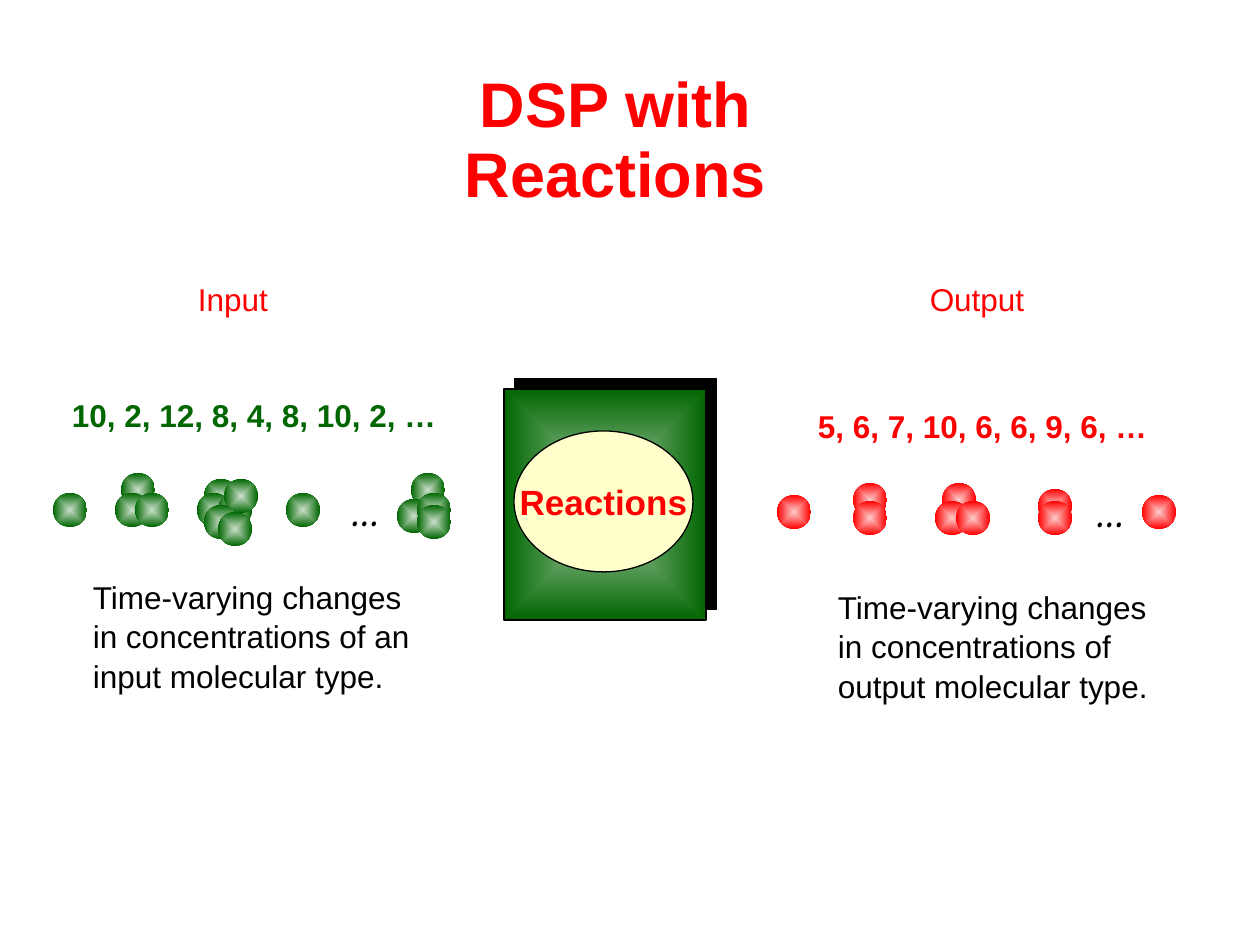
"""Build the "DSP with Reactions" slide: input signal, reaction box, output signal."""
from lxml import etree
from pptx import Presentation
from pptx import util as u
from pptx.dml.color import RGBColor
from pptx.enum import shapes, text
from pptx.oxml import parse_xml
from pptx.oxml.ns import qn, nsdecls

COLORS = {
    "red": "FF0000", "light red": "FECBCB",
    "green": "006600", "light green": "CBDFCB", "box green": "A9CBA9",
    "cream": "FFFFCC", "black": "000000",
}
SCALE = u.Inches(1) / 126
MOLECULE = 34


def fill_radial(shape, center, edge):
    shape.shadow.inherit = False
    shape.fill.gradient()
    for stop, color in zip(shape.fill.gradient_stops, (center, edge)):
        stop.color.rgb = RGBColor.from_string(COLORS[color])
    linear = shape._element.spPr.find(".//" + qn("a:lin"))
    linear.getparent().replace(linear, parse_xml(
        f'<a:path {nsdecls("a")} path="shape">'
        '<a:fillToRect l="50000" t="50000" r="50000" b="50000"/></a:path>'))


def write(shape, words, size, color, bold=False, italic=False, font="Arial",
          wrap=True, align=text.PP_ALIGN.LEFT, anchor=text.MSO_ANCHOR.MIDDLE):
    frame = shape.text_frame
    frame.text = words
    frame.auto_size = text.MSO_AUTO_SIZE.NONE
    frame.word_wrap = wrap
    frame.vertical_anchor = anchor
    frame.margin_left = frame.margin_right = u.Inches(0.07)
    frame.margin_top = frame.margin_bottom = u.Inches(0.04)
    paragraph = frame.paragraphs[0]
    paragraph.alignment = align
    paragraph.font.name = font
    paragraph.font.size = u.Pt(size)
    paragraph.font.bold = bold
    paragraph.font.italic = italic
    paragraph.font.color.rgb = RGBColor.from_string(COLORS[color])
    return paragraph


deck = Presentation()
deck.slide_width, deck.slide_height = u.Inches(10), u.Inches(7.5)
slide = deck.slides.add_slide(deck.slide_layouts[5])

signals = [
    ("green", (341, 493, 48, 33),
     [(53, 493), (121, 473), (115, 493), (135, 493), (204, 479), (197, 493),
      (218, 493), (224, 479), (204, 505), (218, 512), (286, 493), (411, 473),
      (397, 499), (417, 493), (417, 505)]),
    ("red", (1086, 495, 48, 32),
     [(777, 495), (853, 483), (853, 501), (942, 483), (935, 501), (956, 501),
      (1038, 489), (1038, 501), (1142, 495)]),
]
for color, dots_place, molecules in signals:
    signal = slide.shapes.add_group_shape()
    for left, top in molecules:
        molecule = signal.shapes.add_shape(
            shapes.MSO_SHAPE.OVAL,
            *(round(n * SCALE) for n in (left, top, MOLECULE, MOLECULE)))
        fill_radial(molecule, f"light {color}", color)
        molecule.line.fill.background()
    dots = signal.shapes.add_textbox(*(round(n * SCALE) for n in dots_place))
    write(dots, "…", 24, "black", italic=True, font="Cambria")

title = slide.shapes.title
title.left, title.top, title.width, title.height = (
    round(n * SCALE) for n in (370, 62, 491, 79))
heading = write(title, "DSP with Reactions", 36, "red", bold=True, wrap=False,
                align=text.PP_ALIGN.CENTER, anchor=text.MSO_ANCHOR.TOP)
heading.line_spacing = 0.93
title.text_frame.margin_top = u.Inches(0.07)

system = slide.shapes.add_shape(
    shapes.MSO_SHAPE.RECTANGLE, *(round(n * SCALE) for n in (504, 389, 202, 231)))
fill_radial(system, "box green", "green")
effects = system._element.spPr.find(qn("a:effectLst"))
shadow = etree.SubElement(effects, qn("a:outerShdw"), dist=str(u.Pt(8.5)),
                          dir=str(315 * 60000), algn="ctr", rotWithShape="0")
etree.SubElement(shadow, qn("a:srgbClr"), val=COLORS["black"])

reactions = slide.shapes.add_shape(
    shapes.MSO_SHAPE.OVAL, *(round(n * SCALE) for n in (514, 431, 179, 141)))
reactions.shadow.inherit = False
reactions.fill.solid()
reactions.fill.fore_color.rgb = RGBColor.from_string(COLORS["cream"])
write(reactions, "Reactions", 20, "red", bold=True, wrap=False,
      align=text.PP_ALIGN.CENTER)
for outlined in (system, reactions):
    outlined.line.color.rgb = RGBColor.from_string(COLORS["black"])
    outlined.line.width = u.Pt(0.75)

labels = [
    ("Time-varying changes in concentrations of an input molecular type.",
     (84, 599, 350, 73), "black", False),
    ("Time-varying changes in concentrations of output molecular type.",
     (829, 609, 336, 73), "black", False),
    ("10, 2, 12, 8, 4, 8, 10, 2, …", (63, 388, 388, 53), "green", True),
    ("5, 6, 7, 10, 6, 6, 9, 6, …", (809, 399, 357, 53), "red", True),
    ("Input", (189, 262, 97, 73), "red", False),
    ("Output", (921, 262, 129, 73), "red", False),
]
for words, place, color, bold in labels:
    label = slide.shapes.add_textbox(*(round(n * SCALE) for n in place))
    write(label, words, 18, color, bold=bold).line_spacing = 1.04

deck.save("out.pptx")
